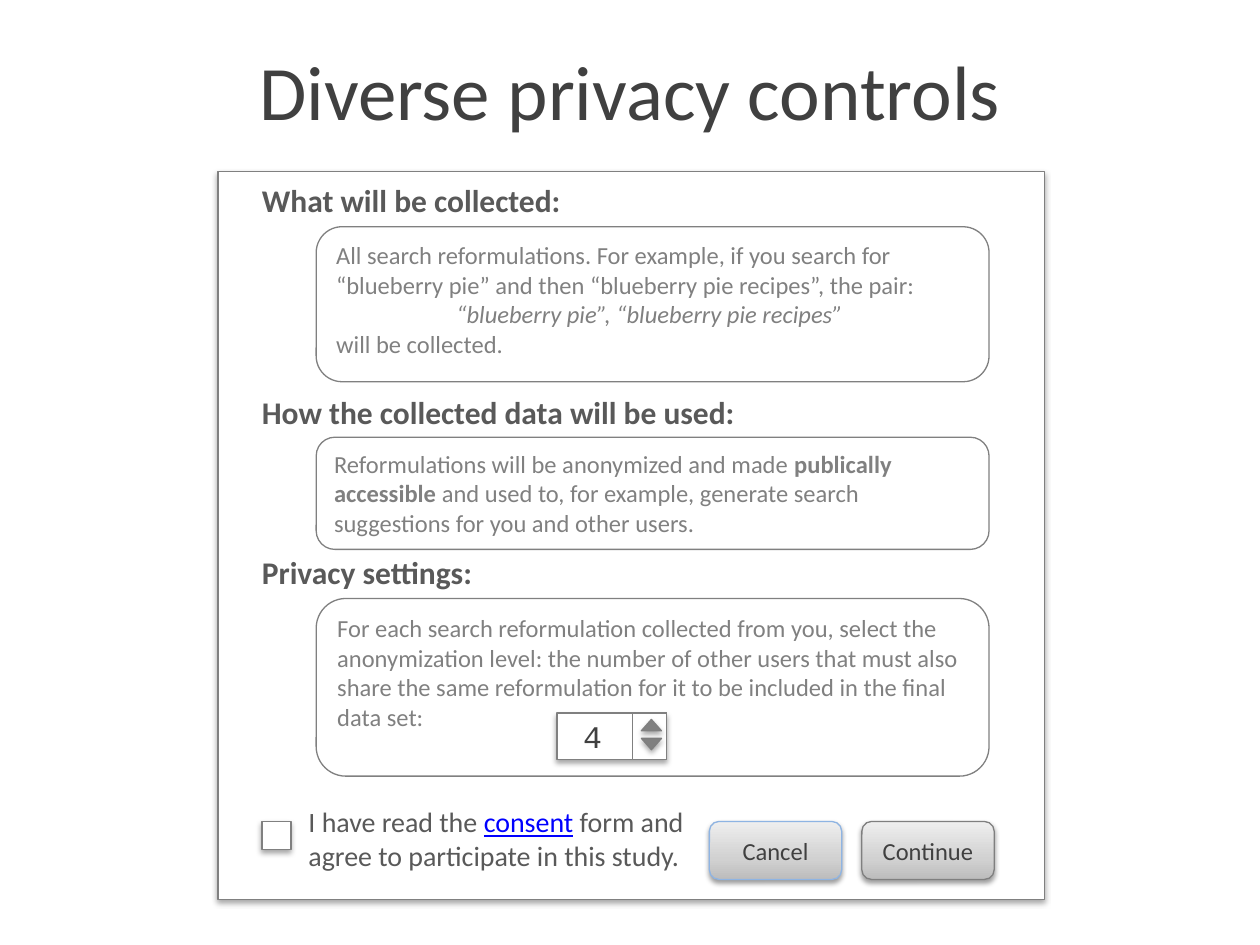
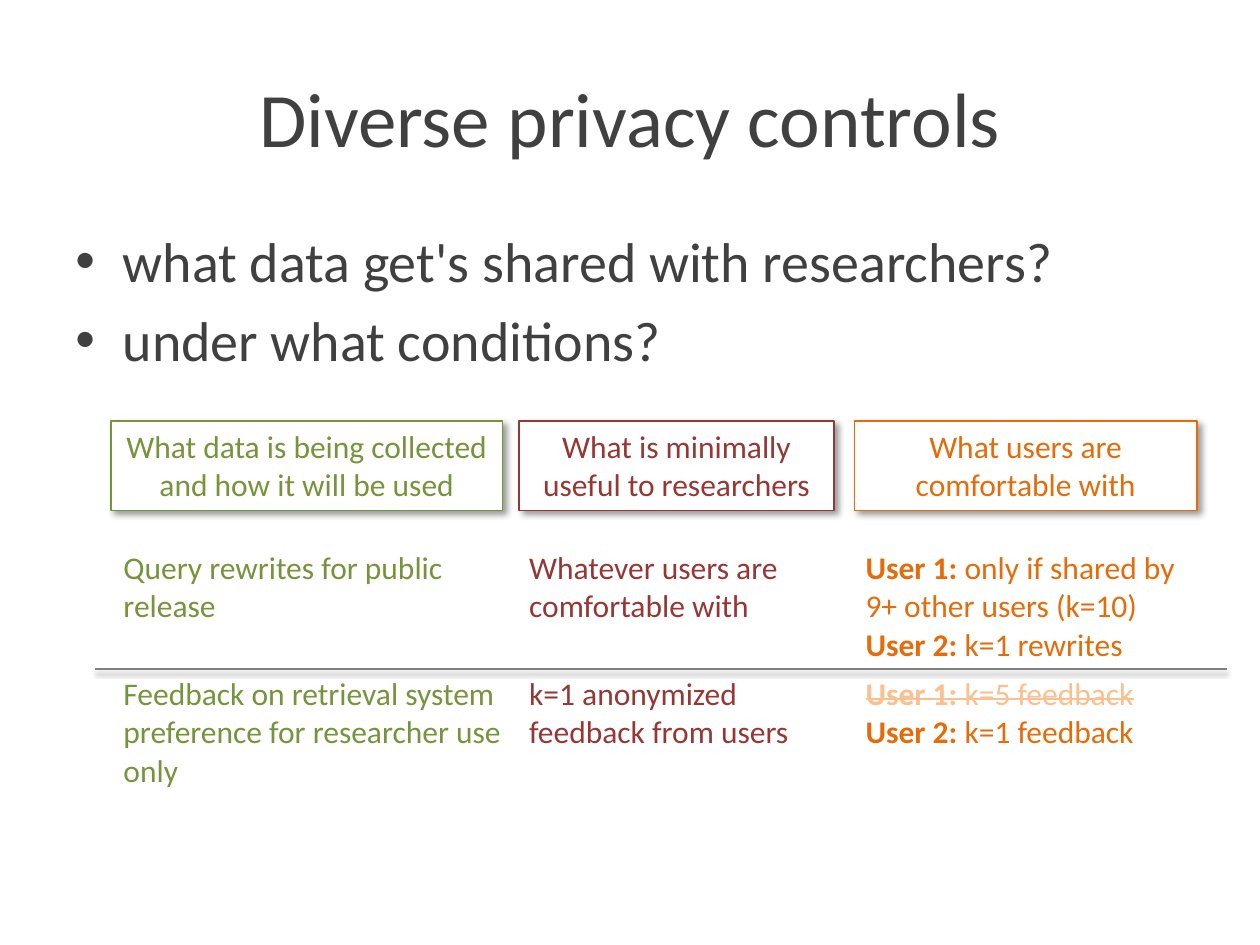
from dataclasses import dataclass

from lxml.etree import SubElement
from pptx import Presentation
from pptx.dml.color import RGBColor
from pptx.enum.shapes import MSO_CONNECTOR as Connector, MSO_SHAPE as Preset
from pptx.enum.text import MSO_ANCHOR as Anchor, PP_ALIGN as Align
from pptx.oxml.ns import qn
from pptx.util import Emu, Inches, Pt


@dataclass(frozen=True)
class Theme:
    font: str = "Calibri"
    digit_font: str = "Courier New"
    paper: str = "FFFFFF"
    ink: str = "404040"
    heading: str = "595959"
    muted: str = "808080"
    edge: str = "7F7F7F"
    focus: str = "8EB4E3"
    link: str = "0000FF"
    green: str = "77933C"
    red: str = "953735"
    orange: str = "E46C0A"
    faded: str = "FAC090"
    button: tuple = ((0, "BDBDBD"), (35, "D1D1D1"), (100, "EEEEEE"))
    title_size: int = 44
    bullet_size: int = 32
    heading_size: int = 18
    consent_size: int = 16
    detail_size: int = 14
    thin: float = 0.75
    rule: float = 1
    raised: tuple = (35, 3.1, 1.8, 90)
    lifted: tuple = (38, 3.1, 1.6, 90)
    slanted: tuple = (40, 4, 3, 45)


THEME = Theme()
COLUMNS, ROWS = 100, 75
BOLD = {"bold": True}


class Deck:
    def __init__(self, theme):
        self.theme = theme
        self.presentation = Presentation()
        self.presentation.slide_width = Inches(10)
        self.presentation.slide_height = Inches(7.5)
        self.slide = None

    def across(self, columns):
        return Emu(round(self.presentation.slide_width * columns / COLUMNS))

    def down(self, rows):
        return Emu(round(self.presentation.slide_height * rows / ROWS))

    def box(self, left, top, width, height):
        return self.across(left), self.down(top), self.across(width), self.down(height)

    def new_slide(self, title, anchor):
        self.slide = self.presentation.slides.add_slide(self.presentation.slide_layouts[6])
        self.text((5, 3, 90, 12.5), [title], anchor=anchor, align=Align.CENTER,
                  size=self.theme.title_size)

    def format_run(self, run, formats):
        values = {"name": self.theme.font, "color": self.theme.ink, **formats}
        run.font.color.rgb = RGBColor.from_string(values.pop("color"))
        if values.pop("strike", False):
            run.font._element.set("strike", "sngStrike")
        values["size"] = Pt(values["size"])
        for name, value in values.items():
            setattr(run.font, name, value)

    def fill_frame(self, frame, paragraphs, anchor=Anchor.TOP, align=Align.LEFT, **formats):
        for name, value in {"word_wrap": True, "vertical_anchor": anchor}.items():
            setattr(frame, name, value)
        self.fill_paragraphs(frame, paragraphs, align, formats)

    def fill_paragraphs(self, frame, paragraphs, align, formats):
        for index, runs in enumerate(paragraphs):
            paragraph = frame.add_paragraph() if index else frame.paragraphs[0]
            paragraph.alignment = align
            for part in [runs] if isinstance(runs, str) else runs:
                words, changes = (part, {}) if isinstance(part, str) else part
                run = paragraph.add_run()
                run.text = words
                self.format_run(run, {**formats, **changes})

    def text(self, place, paragraphs, **formats):
        frame = self.slide.shapes.add_textbox(*self.box(*place)).text_frame
        self.fill_frame(frame, paragraphs, **formats)
        return frame

    def bullets(self, place, items):
        frame = self.text(place, items, size=self.theme.bullet_size)
        for paragraph in frame.paragraphs:
            paragraph.space_before = Pt(self.theme.bullet_size * 0.2)
            properties = paragraph._p.get_or_add_pPr()
            for name, columns in {"marL": 3.75, "indent": -3.75}.items():
                properties.set(name, str(self.across(columns)))
            SubElement(properties, qn("a:buFont"), typeface="Arial")
            SubElement(properties, qn("a:buChar"), char="•")

    def effects(self, shape, shadow):
        effects = SubElement(shape._element.spPr, qn("a:effectLst"))
        if shadow:
            opacity, blur, distance, angle = shadow
            outer = SubElement(effects, qn("a:outerShdw"), blurRad=str(Pt(blur)),
                               dist=str(Pt(distance)), dir=str(angle * 60000),
                               rotWithShape="0")
            color = SubElement(outer, qn("a:srgbClr"), val="000000")
            SubElement(color, qn("a:alpha"), val=str(opacity * 1000))

    def stroke(self, shape, color, width):
        shape.line.color.rgb = RGBColor.from_string(color)
        shape.line.width = Pt(width)

    def shape(self, preset, place, fill=None, line=None, shadow=None, rotation=0):
        shape = self.slide.shapes.add_shape(preset, *self.box(*place))
        shape.rotation = rotation
        shape.fill.solid()
        shape.fill.fore_color.rgb = RGBColor.from_string(fill or self.theme.paper)
        self.stroke(shape, line or self.theme.muted, self.theme.thin)
        self.effects(shape, shadow)
        return shape

    def panel(self, top, height, paragraphs):
        shape = self.shape(Preset.ROUNDED_RECTANGLE, (25.1, top, 53.4, height))
        self.fill_frame(shape.text_frame, paragraphs, size=self.theme.detail_size,
                        color=self.theme.muted)
        return shape

    def heading(self, top, words):
        self.text((19.8, top, 58.8, 4), [words], size=self.theme.heading_size,
                  color=self.theme.heading, bold=True)

    def button(self, left, words, line):
        shape = self.shape(Preset.ROUNDED_RECTANGLE, (left, 65.2, 10.5, 4.6), line=line,
                           shadow=self.theme.lifted)
        shape.fill.gradient()
        shape.fill.gradient_angle = 90
        stops = shape._element.spPr.find(".//" + qn("a:gsLst"))
        stops.clear()
        for position, color in self.theme.button:
            stop = SubElement(stops, qn("a:gs"), pos=str(position * 1000))
            SubElement(stop, qn("a:srgbClr"), val=color)
        self.fill_frame(shape.text_frame, [words], anchor=Anchor.MIDDLE,
                        align=Align.CENTER, size=self.theme.detail_size)

    def table(self, left, top, widths, row_height, rows, colors):
        place = self.box(left, top, sum(widths), row_height * len(rows))
        table = self.slide.shapes.add_table(len(rows), len(widths), *place).table
        for name in ("first_row", "horz_banding"):
            setattr(table, name, False)
        for column, width in zip(table.columns, widths):
            column.width = self.across(width)
        for row_index, row in enumerate(rows):
            for column_index, paragraphs in enumerate(row):
                cell = table.cell(row_index, column_index)
                cell.fill.background()
                self.fill_paragraphs(cell.text_frame, paragraphs, Align.LEFT, {
                    "size": self.theme.heading_size, "color": colors[column_index]})

    def rule(self, left, right, row):
        line = self.slide.shapes.add_connector(
            Connector.STRAIGHT, self.across(left), self.down(row),
            self.across(right), self.down(row))
        self.stroke(line, self.theme.edge, self.theme.rule)
        self.effects(line, self.theme.lifted)


def build_consent_dialog(deck):
    theme = deck.theme
    deck.new_slide("Diverse privacy controls", Anchor.TOP)
    deck.shape(Preset.RECTANGLE, (17.3, 13.6, 65.6, 57.8), shadow=theme.raised)

    deck.heading(13.9, "What will be collected:")
    collected = deck.panel(18, 12.3, [
        "All search reformulations. For example, if you search for “blueberry pie” "
        "and then “blueberry pie recipes”, the pair:",
        [("“blueberry pie”, “blueberry pie recipes” ", {"italic": True})],
        "will be collected."])
    collected.text_frame.paragraphs[1].alignment = Align.CENTER

    deck.heading(30.7, "How the collected data will be used:")
    deck.panel(34.7, 8.9, [[
        "Reformulations will be anonymized and made ", ("publically accessible ", BOLD),
        "and used to, for example, generate search suggestions for you and other users."]])

    deck.heading(43.4, "Privacy settings:")
    deck.panel(47.5, 14.1, [
        "For each search reformulation collected from you, select the anonymization "
        "level: the number of other users that must also share the same reformulation "
        "for it to be included in the final data set:"])

    deck.shape(Preset.RECTANGLE, (44.2, 56.6, 8.7, 3.7), shadow=theme.raised)
    deck.shape(Preset.RECTANGLE, (50.2, 56.6, 2.7, 3.7))
    for top, rotation in ((58.6, 180), (57.1, 0)):
        deck.shape(Preset.ISOSCELES_TRIANGLE, (50.9, top, 1.6, 0.9), fill=theme.muted,
                   line=theme.edge, shadow=theme.raised, rotation=rotation)
    deck.text((45.3, 56.4, 4.4, 4), ["4"], name=theme.digit_font, size=theme.heading_size)

    deck.shape(Preset.RECTANGLE, (20.8, 65.2, 2.3, 2.2), shadow=theme.raised)
    deck.text((23.5, 63.4, 32.4, 6.4), [[
        "I have read the ", ("consent", {"color": theme.link, "underline": True}),
        " form and agree to participate in this study."]],
        size=theme.consent_size, color=theme.heading)
    deck.button(56.3, "Cancel", theme.focus)
    deck.button(68.4, "Continue", theme.edge)


def build_sharing_conditions(deck):
    theme = deck.theme
    deck.new_slide("Diverse privacy controls", Anchor.MIDDLE)
    deck.bullets((5, 17.5, 90, 14.4), [
        "what data get's shared with researchers?", "under what conditions?"])

    headers = (
        (67.8, 27.2, theme.orange, "What users are comfortable with"),
        (41.2, 25, theme.red, "What is minimally useful to researchers"),
        (8.8, 31.1, theme.green, "What data is being collected and how it will be used"))
    for left, width, color, words in headers:
        header = deck.shape(Preset.RECTANGLE, (left, 33.4, width, 7.1), line=color,
                            shadow=theme.slanted)
        deck.fill_frame(header.text_frame, [words], align=Align.CENTER,
                        size=theme.heading_size, color=color)

    declined = {"color": theme.faded, "strike": True}
    rows = (
        (["Query rewrites for public release"],
         ["Whatever users are comfortable with"],
         [[("User 1: ", BOLD), "only if shared by 9+ other users (k=10)"],
          [("User 2: ", BOLD), "k=1 rewrites"]]),
        (["Feedback on retrieval system preference for researcher use only"],
         ["k=1 anonymized feedback from users"],
         [[("User 1: ", {**declined, **BOLD}), ("k=5 feedback", declined)],
          [("User 2: ", BOLD), "k=1 feedback"]]))
    deck.table(8.8, 43.1, (32.2, 26.7, 28.4), 10, rows,
               (theme.green, theme.red, theme.orange))
    deck.rule(7.5, 97.4, 53.1)


def main():
    deck = Deck(THEME)
    build_consent_dialog(deck)
    build_sharing_conditions(deck)
    deck.presentation.save("out.pptx")


if __name__ == "__main__":
    main()
